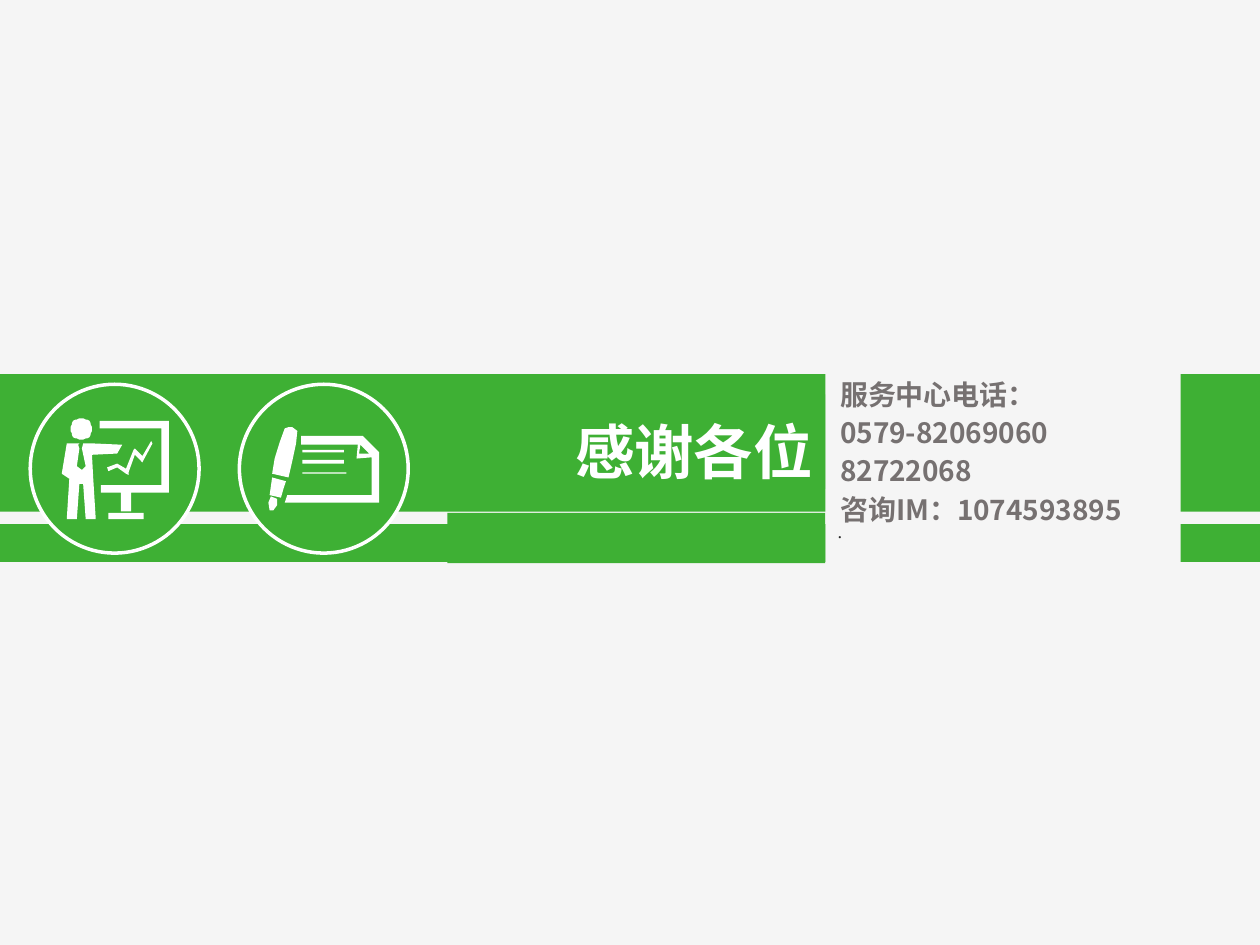
from dataclasses import dataclass
from math import cos, pi, sin

from lxml.etree import SubElement
from pptx import Presentation
from pptx.dml.color import RGBColor
from pptx.enum.shapes import MSO_SHAPE
from pptx.enum.text import MSO_ANCHOR, PP_ALIGN
from pptx.oxml.ns import qn
from pptx.util import Inches, Pt

GREEN = RGBColor(0x3E, 0xB0, 0x34)
WHITE = RGBColor(0xFF, 0xFF, 0xFF)
PAPER = RGBColor(0xF5, 0xF5, 0xF5)
GREY = RGBColor(0x76, 0x71, 0x71)
INK = RGBColor(0x26, 0x26, 0x26)
SANS = "Noto Sans CJK SC"
SERIF = "Times New Roman"

# The slide is a grid of 1000 columns by 750 rows of square cells.
COLUMNS, ROWS = 1000, 750
CELL = Inches(10) // COLUMNS

Contour = list[tuple[float, float]]


@dataclass(frozen=True)
class Box:
    column: float
    row: float
    columns: float
    rows: float

    def emu(self) -> list[int]:
        return [round(n * CELL) for n in (self.column, self.row, self.columns, self.rows)]


@dataclass(frozen=True)
class TextStyle:
    font: str
    size: float
    color: RGBColor
    bold: bool = False
    line_spacing: float = 1.0
    gap: float = 0
    align: PP_ALIGN = PP_ALIGN.LEFT


@dataclass(frozen=True)
class Badge:
    column: int
    icon: list[Contour]


def rectangle(left: int, top: int, right: int, bottom: int) -> Contour:
    return [(left, top), (right, top), (right, bottom), (left, bottom)]


def circle(x: float, y: float, radius: float, steps: int = 32) -> Contour:
    angles = [2 * pi * i / steps for i in range(steps)]
    return [(x + radius * cos(a), y + radius * sin(a)) for a in angles]


PRESENTER = [
    circle(64.5, 340.5, 8.5),
    # trend line
    [(85, 371), (93, 368), (100, 372), (106, 357), (107, 356), (113, 362), (120, 350),
     (121, 352), (114, 365), (113, 367), (107, 361), (102, 375), (102, 377), (100, 376),
     (93, 371), (86, 374)],
    # stand and board
    rectangle(86, 407, 114, 412),
    [(104, 391), (134, 391), (134, 334), (79, 334), (79, 340), (128, 340), (128, 385),
     (80, 385), (80, 391), (96, 391), (96, 406), (104, 406)],
    # body with tie
    [(49, 376), (55, 380), (53, 412), (61, 412), (63, 384), (66, 384), (68, 412),
     (76, 412), (74, 380), (73, 361), (93, 360), (97, 353), (75, 352), (66, 352),
     (65, 356), (68, 370), (65, 373), (61, 370), (63, 356), (62, 353), (63, 352),
     (53, 352)],
]

PEN_AND_PAPER = [
    # pen barrel, grip and nib
    [(226, 340), (229, 339), (232, 339), (236, 342), (235, 352), (232, 366), (229, 379),
     (216, 376), (218, 364), (222, 351)],
    [(216, 379), (214, 393), (223, 395), (225, 388), (227, 382)],
    [(215, 394), (220, 396), (220, 401), (217, 405), (214, 405), (213, 399)],
    # paper and its folded corner
    [(228, 393), (226, 399), (301, 399), (301, 359), (288, 346), (239, 346), (239, 353),
     (284, 353), (283, 364), (295, 363), (295, 393)],
    [(293, 360), (285, 360), (286, 353)],
    # written lines
    rectangle(240, 357, 273, 359),
    rectangle(240, 365, 273, 368),
    rectangle(240, 375, 275, 376),
]

BADGES = [Badge(24, PRESENTER), Badge(190, PEN_AND_PAPER)]
BADGE_TOP, BADGE_SIZE = 305, 134

BAND_END, BAND_RESUME = 655, 937
UPPER_BAND, LOWER_BAND = (297, 109), (416, 30)

TITLE_STYLE = TextStyle(SANS, 34, WHITE, True, 1.25, align=PP_ALIGN.RIGHT)
CONTACT_STYLE = TextStyle(SANS, 16, GREY, True, 0.9, gap=4.5)
CONTACT_LINES = ["服务中心电话：", "0579-82069060", "82722068", "咨询IM：1074593895"]


def add_filled(shapes, kind: MSO_SHAPE, box: Box):
    shape = shapes.add_shape(kind, *box.emu())
    shape.shadow.inherit = False
    shape.fill.solid()
    shape.fill.fore_color.rgb = GREEN
    shape.line.fill.background()
    return shape


def write(frame, lines: list[str], style: TextStyle) -> None:
    frame.word_wrap = True
    for index, line in enumerate(lines):
        paragraph = frame.add_paragraph() if index else frame.paragraphs[0]
        paragraph.alignment = style.align
        paragraph.line_spacing = style.line_spacing
        paragraph.space_before = Pt(style.gap if index else 0)
        run = paragraph.add_run()
        run.text = line
        run.font.size = Pt(style.size)
        run.font.bold = style.bold
        run.font.color.rgb = style.color
        run.font.name = style.font
        SubElement(run.font._element, qn("a:ea"), typeface=style.font)


def add_text(shapes, box: Box, lines: list[str], style: TextStyle) -> None:
    write(shapes.add_textbox(*box.emu()).text_frame, lines, style)


def add_icon(shapes, contours: list[Contour]) -> None:
    first, *others = contours
    builder = shapes.build_freeform(*first[0], scale=CELL)
    builder.add_line_segments(first[1:], close=True)
    for contour in others:
        builder.move_to(*contour[0])
        builder.add_line_segments(contour[1:], close=True)
    icon = builder.convert_to_shape()
    icon.shadow.inherit = False
    icon.fill.solid()
    icon.fill.fore_color.rgb = WHITE
    icon.line.fill.background()


def add_badge(shapes, badge: Badge) -> None:
    ring = add_filled(shapes, MSO_SHAPE.OVAL,
                      Box(badge.column, BADGE_TOP, BADGE_SIZE, BADGE_SIZE))
    ring.line.color.rgb = WHITE
    ring.line.width = Pt(2)
    add_icon(shapes, badge.icon)


def main() -> None:
    presentation = Presentation()
    presentation.slide_width = COLUMNS * CELL
    presentation.slide_height = ROWS * CELL
    slide = presentation.slides.add_slide(presentation.slide_layouts[6])
    slide.background.fill.solid()
    slide.background.fill.fore_color.rgb = PAPER
    shapes = slide.shapes

    add_text(shapes, Box(BAND_END, 408, 281, 28), ["."], TextStyle(SERIF, 10.5, INK))

    for start, end in ((BAND_RESUME, COLUMNS), (0, BAND_END)):
        for top, height in (UPPER_BAND, LOWER_BAND):
            add_filled(shapes, MSO_SHAPE.RECTANGLE, Box(start, top, end - start, height))

    title = add_filled(shapes, MSO_SHAPE.RECTANGLE, Box(BAND_END - 360, 313, 360, 75))
    title.text_frame.vertical_anchor = MSO_ANCHOR.MIDDLE
    write(title.text_frame, ["感谢各位"], TITLE_STYLE)
    add_filled(shapes, MSO_SHAPE.RECTANGLE, Box(BAND_END - 300, 407, 300, 40))

    for badge in BADGES:
        add_badge(shapes, badge)

    add_text(shapes, Box(657, 298, 410, 147), CONTACT_LINES, CONTACT_STYLE)
    presentation.save("out.pptx")


if __name__ == "__main__":
    main()
